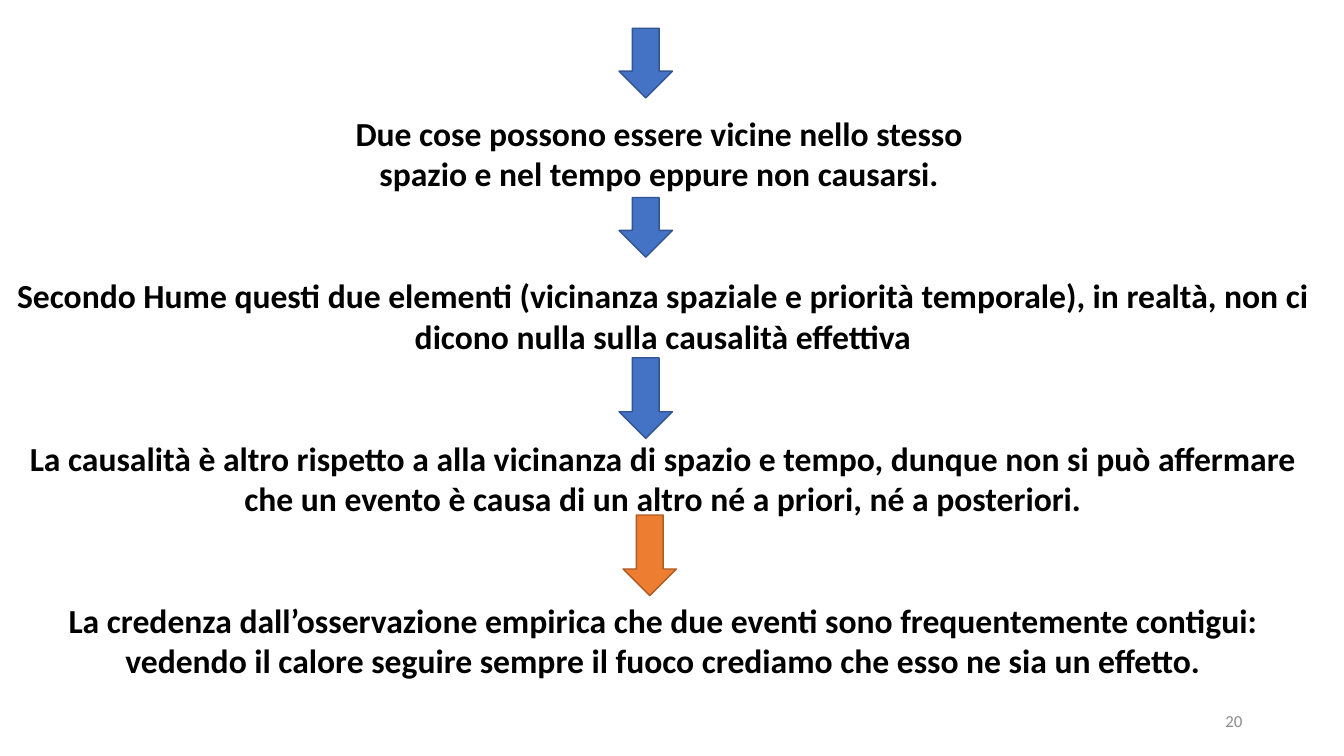
from dataclasses import dataclass

from pptx import Presentation
from pptx.dml.color import RGBColor
from pptx.enum.shapes import MSO_SHAPE
from pptx.enum.text import MSO_ANCHOR, MSO_AUTO_SIZE, PP_ALIGN
from pptx.util import Inches, Pt

DOWN_ARROW = MSO_SHAPE.DOWN_ARROW
CENTER, RIGHT = PP_ALIGN.CENTER, PP_ALIGN.RIGHT
TOP, MIDDLE = MSO_ANCHOR.TOP, MSO_ANCHOR.MIDDLE
FIT_SHAPE, NO_FIT = MSO_AUTO_SIZE.SHAPE_TO_FIT_TEXT, MSO_AUTO_SIZE.NONE


@dataclass(frozen=True)
class Theme:
    font: str = "Calibri"
    body_size: float = 24
    number_size: float = 12
    text: str = "000000"
    muted: str = "8C8C8C"
    blue: str = "4472C4"
    blue_line: str = "325491"
    orange: str = "ED7D31"
    orange_line: str = "AF5C24"


theme = Theme()


def add_text(page, paragraphs, left, top, width, height, size, color, bold=False,
             align=CENTER, anchor=TOP, fit=NO_FIT, margin_top=0.05):
    box = page.shapes.add_textbox(Inches(left), Inches(top), Inches(width), Inches(height))
    frame = box.text_frame
    frame.word_wrap = True
    frame.auto_size = fit
    frame.vertical_anchor = anchor
    frame.margin_top = Inches(margin_top)
    for index, (text, gap) in enumerate(paragraphs):
        para = frame.paragraphs[0] if index == 0 else frame.add_paragraph()
        para.alignment = align
        para.space_before = Inches(gap)
        span = para.add_run()
        span.text = text
        span.font.name = theme.font
        span.font.size = Pt(size)
        span.font.bold = bold
        span.font.color.rgb = RGBColor.from_string(color)


deck = Presentation()
deck.slide_width, deck.slide_height = Inches(13.33), Inches(7.5)
page = deck.slides.add_slide(deck.slide_layouts[6])

add_text(page, [("20", 0)], 9.42, 6.95, 3, 0.4, theme.number_size, theme.muted,
         align=RIGHT, anchor=MIDDLE)

step_gap = 0.81
argument = [
    ("Due cose possono essere vicine nello stesso ", 0),
    ("spazio e nel tempo eppure non causarsi. ", 0),
    ("Secondo Hume questi due elementi (vicinanza spaziale e priorità temporale), "
     "in realtà, non ci dicono nulla sulla causalità effettiva", step_gap),
    ("La causalità è altro rispetto a alla vicinanza di spazio e tempo, dunque non si può "
     "affermare che un evento è causa di un altro né a priori, né a posteriori.", step_gap),
    ("La credenza dall’osservazione empirica che due eventi sono frequentemente contigui: "
     "vedendo il calore seguire sempre il fuoco crediamo che esso ne sia un effetto.", step_gap),
]
add_text(page, argument, 0, 0.15, 13.15, 6.66, theme.body_size, theme.text,
         bold=True, fit=FIT_SHAPE, margin_top=0.97)

arrows = [
    (6.14, 0.28, 0.69, theme.blue, theme.blue_line),
    (6.14, 1.96, 0.59, theme.blue, theme.blue_line),
    (6.14, 3.55, 0.8, theme.blue, theme.blue_line),
    (6.18, 5.11, 0.8, theme.orange, theme.orange_line),
]
for left, top, height, fill, line in arrows:
    arrow = page.shapes.add_shape(DOWN_ARROW, Inches(left), Inches(top),
                                  Inches(0.53), Inches(height))
    arrow.shadow.inherit = False
    arrow.fill.solid()
    arrow.fill.fore_color.rgb = RGBColor.from_string(fill)
    arrow.line.color.rgb = RGBColor.from_string(line)
    arrow.line.width = Pt(1)

deck.save("out.pptx")
